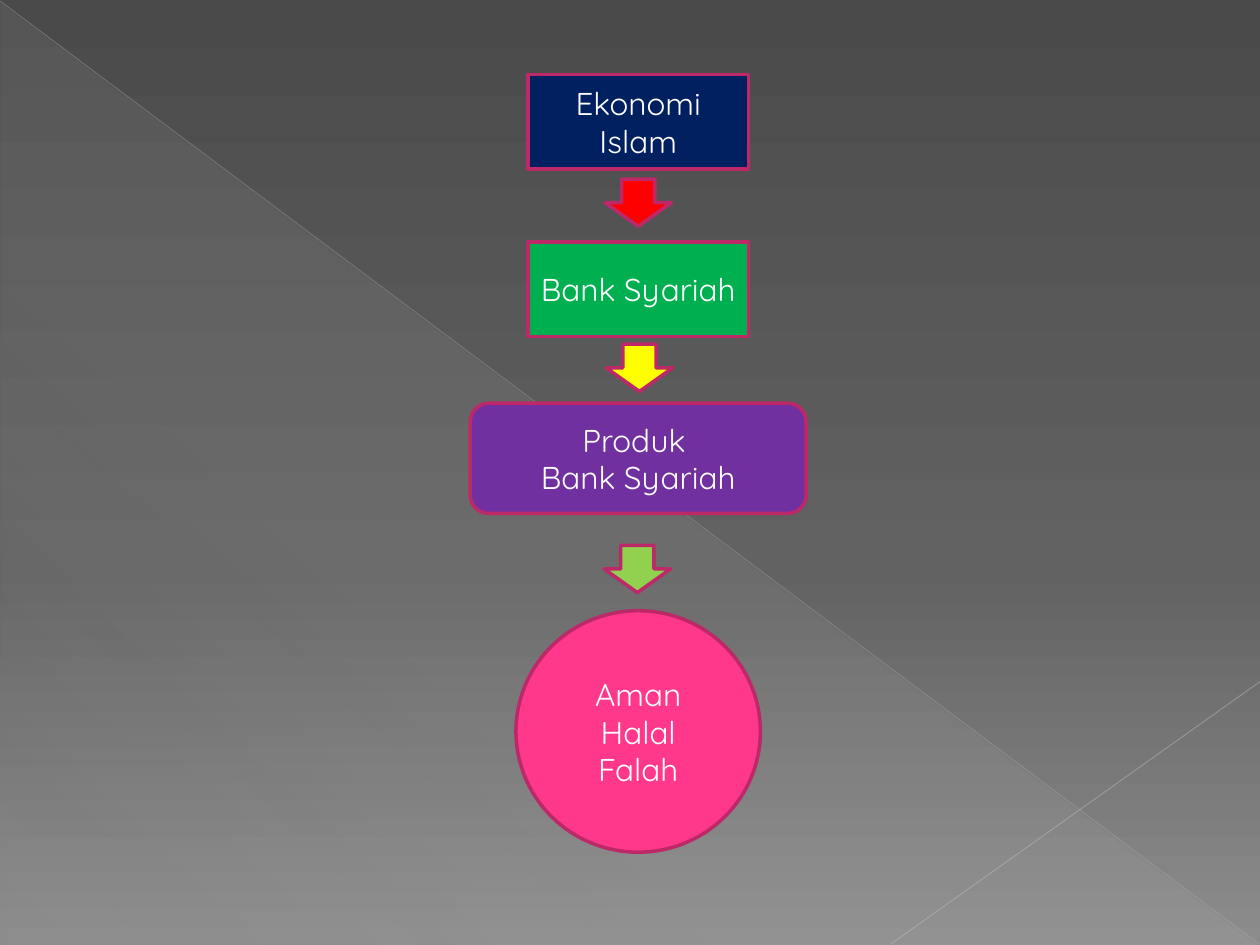
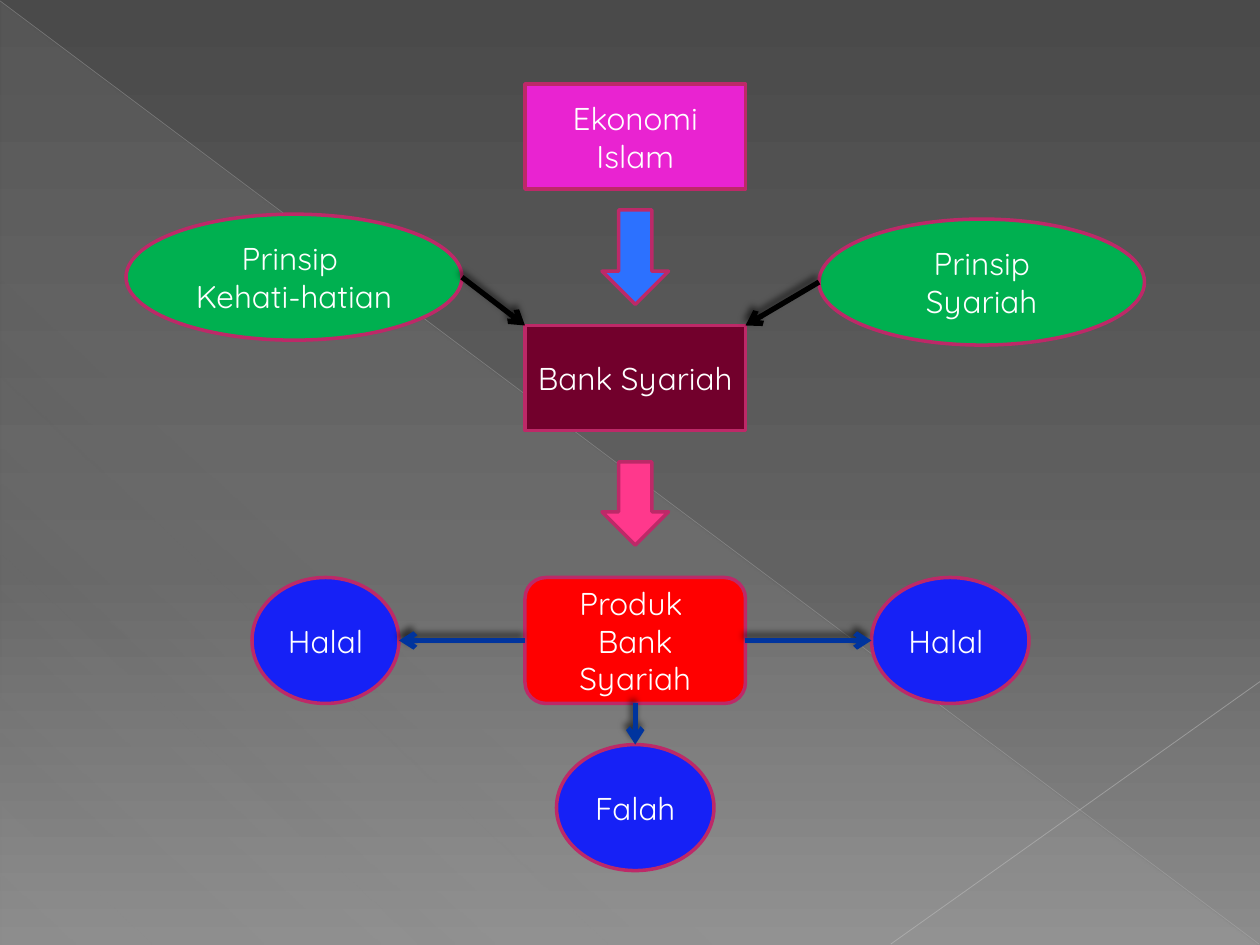
from dataclasses import dataclass

from lxml.etree import SubElement
from pptx import Presentation
from pptx.dml.color import RGBColor
from pptx.enum.shapes import MSO_CONNECTOR, MSO_SHAPE
from pptx.enum.text import MSO_ANCHOR, PP_ALIGN
from pptx.oxml.ns import qn
from pptx.util import Pt


@dataclass(frozen=True)
class Theme:
    font: str = "Quicksand"
    size: float = 18
    text: str = "FFFFFF"
    outline: str = "BD2968"
    outline_width: float = 2
    arrow_width: float = 3
    black: str = "000000"
    navy: str = "002060"
    green: str = "00B050"
    lime: str = "92D050"
    red: str = "FF0000"
    yellow: str = "FFFF00"
    purple: str = "7030A0"
    pink: str = "FF388C"
    magenta: str = "E923D1"
    maroon: str = "72002C"
    sky: str = "2C71FF"
    blue: str = "1621F6"
    royal: str = "00349E"
    backdrop: tuple = ((0, "4A4A4A", 100), (60, "626262", 100), (100, "8C8C8C", 100))
    sheen: tuple = ((0, "D2D2D2", 10), (70, "D2D2D2", 8), (100, "D2D2D2", 1))
    long_ray: str = "BFBFBF"
    short_ray: str = "C6C6C6"


T = Theme()
RECT, ROUND = MSO_SHAPE.RECTANGLE, MSO_SHAPE.ROUNDED_RECTANGLE
OVAL, DOWN = MSO_SHAPE.OVAL, MSO_SHAPE.DOWN_ARROW


def child(parent, tag, **attrs):
    return SubElement(parent, qn(tag), {k: str(v) for k, v in attrs.items()})


def add_color(parent, color, opacity):
    clr = child(parent, "a:srgbClr", val=color)
    if opacity < 100:
        child(clr, "a:alpha", val=opacity * 1000)


def set_gradient(fill, owner, stops, angle):
    fill.gradient()
    grad = owner.find(".//" + qn("a:gradFill"))
    for old in list(grad):
        grad.remove(old)
    gs_list = child(grad, "a:gsLst")
    for pos, color, opacity in stops:
        add_color(child(gs_list, "a:gs", pos=pos * 1000), color, opacity)
    child(grad, "a:lin", ang=angle * 60000, scaled=0)


def add_line(s, start, end, color, width):
    line = s.shapes.add_connector(MSO_CONNECTOR.STRAIGHT, *map(Pt, (*start, *end)))
    line.line.color.rgb = RGBColor.from_string(color)
    line.line.width = Pt(width)
    effects = child(line.element.spPr, "a:effectLst")
    return line, effects


def add_ray(s, start, end, color, width, opacity):
    line, _ = add_line(s, start, end, color, width)
    clr = line.element.find(".//" + qn("a:srgbClr"))
    child(clr, "a:alpha", val=opacity * 1000)
    return line


def add_arrow(s, start, end, color, begin=None, finish=None):
    line, effects = add_line(s, start, end, color, T.arrow_width)
    child(line.line._get_or_add_ln(), "a:tailEnd", type="arrow")
    shadow = child(effects, "a:outerShdw", blurRad=Pt(4), dist=Pt(3),
                   dir=245 * 60000, rotWithShape=0)
    add_color(shadow, T.black, 60)
    if begin:
        line.begin_connect(*begin)
    if finish:
        line.end_connect(*finish)


def add_node(s, kind, center, top, width, height, color, *lines):
    sp = s.shapes.add_shape(kind, *map(Pt, (center - width / 2, top, width, height)))
    sp.shadow.inherit = False
    sp.fill.solid()
    sp.fill.fore_color.rgb = RGBColor.from_string(color)
    sp.line.color.rgb = RGBColor.from_string(T.outline)
    sp.line.width = Pt(T.outline_width)
    tf = sp.text_frame
    tf.word_wrap = True
    tf.vertical_anchor = MSO_ANCHOR.MIDDLE
    for i, text in enumerate(lines):
        p = tf.add_paragraph() if i else tf.paragraphs[0]
        p.text = text
        p.alignment = PP_ALIGN.CENTER
        p.font.name, p.font.size = T.font, Pt(T.size)
        p.font.color.rgb = RGBColor.from_string(T.text)
    return sp


def build_backdrop(prs, layout):
    master = prs.slide_master
    set_gradient(master.background.fill, master.element, T.backdrop, 90)
    for holder in list(layout.placeholders):
        holder.element.getparent().remove(holder.element)
    s = prs.slides.add_slide(layout)
    sheen = s.shapes.add_shape(MSO_SHAPE.RIGHT_TRIANGLE, *map(Pt, (0.5, 1.2, 718.8, 538.8)))
    sheen.shadow.inherit = False
    sheen.line.fill.background()
    set_gradient(sheen.fill, sheen.element, T.sheen, 133)
    rays = [add_ray(s, (0, 0.5), (719.5, 539.5), T.long_ray, 0.39, 35),
            add_ray(s, (720, 389.5), (509, 539.5), T.short_ray, 0.47, 45)]
    for shape in (sheen, *rays):
        layout.shapes.element.append(shape.element)
    return s


def build_flow(s):
    mid = 364.7
    add_node(s, RECT, mid, 42.5, 126, 54, T.navy, "Ekonomi Islam")
    add_node(s, RECT, mid, 138.2, 126, 54, T.green, "Bank Syariah")
    add_node(s, ROUND, mid, 230.4, 192, 63, T.purple, "Produk ", "Bank Syariah")
    add_node(s, OVAL, mid, 349, 139.7, 138, T.pink, "Aman", "Halal", "Falah")
    for center, top, color in ((mid, 102.3, T.red), (mid + 0.7, 196.7, T.yellow),
                               (mid - 0.5, 311.6, T.lime)):
        add_node(s, DOWN, center, top, 38, 27, color)


def build_principles(s):
    mid = 363
    add_node(s, RECT, mid, 48, 126, 60, T.magenta, "Ekonomi Islam")
    add_node(s, RECT, mid, 186, 126, 60, T.maroon, "Bank Syariah")
    product = add_node(s, ROUND, mid, 330, 126, 72, T.red, "Produk ", "Bank Syariah")
    add_node(s, DOWN, mid, 120, 38, 54, T.sky)
    add_node(s, DOWN, mid, 264, 38, 47.5, T.pink)
    add_node(s, OVAL, 168, 122.4, 192, 72, T.green, "Prinsip ", "Kehati-hatian")
    add_node(s, OVAL, 561, 125.2, 186, 72, T.green, "Prinsip Syariah")
    add_node(s, OVAL, 186, 330, 84, 72, T.blue, "Halal")
    add_node(s, OVAL, 543, 330, 90, 72, T.blue, "Halal ")
    falah = add_node(s, OVAL, mid, 425.5, 90, 72, T.blue, "Falah ")

    add_arrow(s, (264, 158.4), (300, 186), T.black)
    add_arrow(s, (468, 161.2), (426, 186), T.black)
    add_arrow(s, (300, 366), (228, 366), T.royal, (product, 1))
    add_arrow(s, (426, 366), (498, 366), T.royal, (product, 3))
    add_arrow(s, (mid, 402), (mid, 425.5), T.royal, (product, 2), (falah, 0))


def main():
    prs = Presentation()
    prs.slide_width, prs.slide_height = Pt(720), Pt(540)
    layout = prs.slide_layouts[6]
    build_flow(build_backdrop(prs, layout))
    build_principles(prs.slides.add_slide(layout))
    prs.save("out.pptx")


if __name__ == "__main__":
    main()
